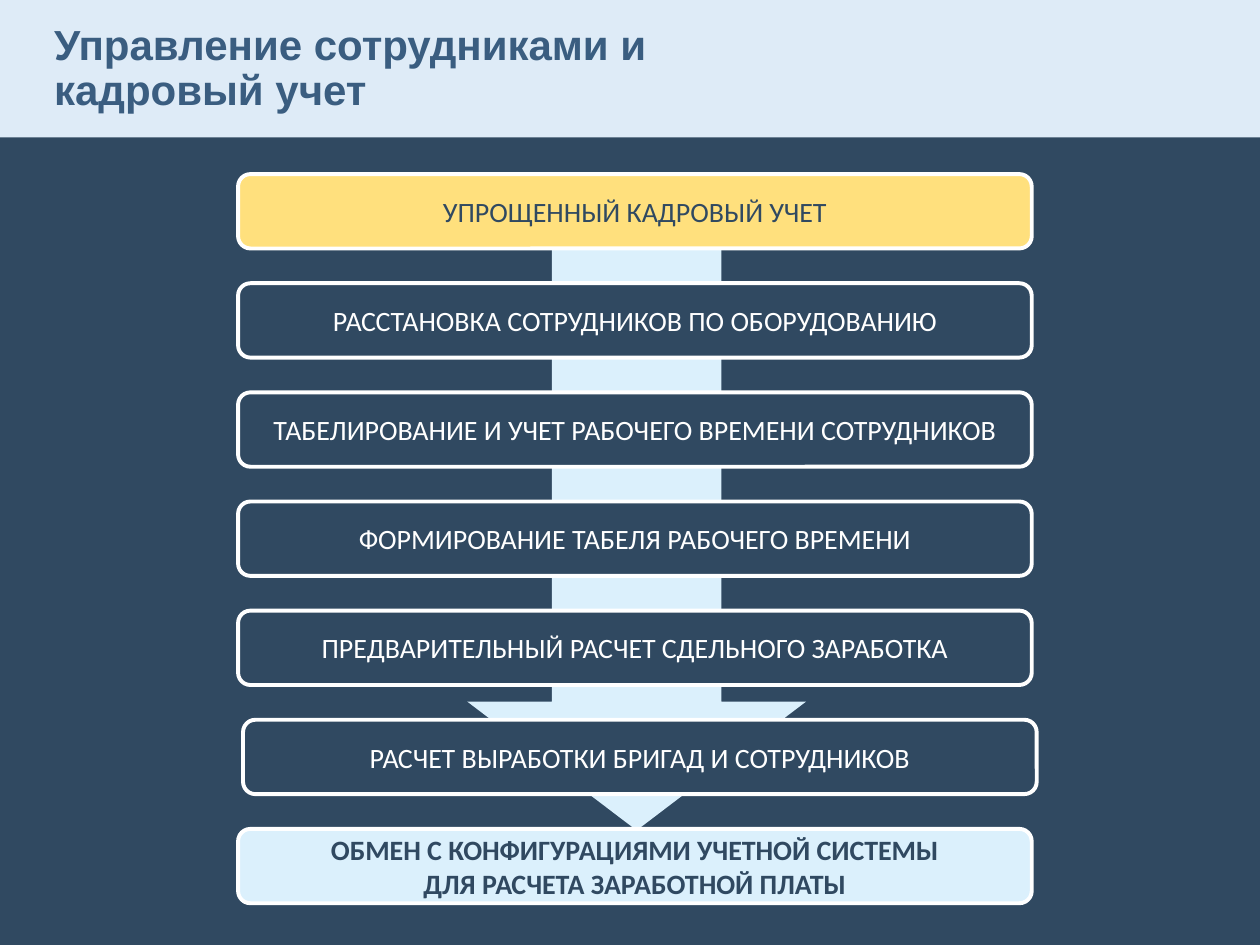
from pptx import Presentation
from pptx.dml.color import RGBColor
from pptx.enum.shapes import MSO_SHAPE
from pptx.enum.text import MSO_ANCHOR, PP_ALIGN
from pptx.util import Cm, Pt

TITLE = "Управление сотрудниками и кадровый учет"
STEPS = [
    ("УПРОЩЕННЫЙ КАДРОВЫЙ УЧЕТ", "start", 0),
    ("РАССТАНОВКА СОТРУДНИКОВ ПО ОБОРУДОВАНИЮ", "step", 0),
    ("ТАБЕЛИРОВАНИЕ И УЧЕТ РАБОЧЕГО ВРЕМЕНИ СОТРУДНИКОВ", "step", 0),
    ("ФОРМИРОВАНИЕ ТАБЕЛЯ РАБОЧЕГО ВРЕМЕНИ", "step", 0),
    ("ПРЕДВАРИТЕЛЬНЫЙ РАСЧЕТ СДЕЛЬНОГО ЗАРАБОТКА", "step", 0),
    ("РАСЧЕТ ВЫРАБОТКИ БРИГАД И СОТРУДНИКОВ", "step", 0.1),
    ("ОБМЕН С КОНФИГУРАЦИЯМИ УЧЕТНОЙ СИСТЕМЫ\vДЛЯ РАСЧЕТА ЗАРАБОТНОЙ ПЛАТЫ", "end", 0),
]
NAVY, PALE, WHITE = (RGBColor.from_string(c) for c in ("304961", "DBF0FC", "FFFFFF"))
THEME = {
    "back": NAVY,
    "band": RGBColor.from_string("DEEBF7"),
    "arrow": PALE,
    "edge": WHITE,
    "title": {"name": "Arial", "size": Pt(24), "bold": True, "color": RGBColor.from_string("3A5D80")},
    "text": {"name": "Calibri", "size": Pt(16)},
    "steps": {
        "start": (RGBColor.from_string("FFE07D"), {"color": NAVY, "bold": False}),
        "step": (NAVY, {"color": WHITE, "bold": False}),
        "end": (PALE, {"color": NAVY, "bold": True}),
    },
}
LEFT, TOP, WIDTH, HEIGHT, PITCH = 4.8, 3.51, 16, 1.5, 2.2


def style(font, form):
    for key, value in form.items():
        if key == "color":
            font.color.rgb = value
        else:
            setattr(font, key, value)


def write(shape, text, form, align):
    frame = shape.text_frame
    frame.word_wrap = True
    frame.vertical_anchor = MSO_ANCHOR.MIDDLE
    frame.text = text
    para = frame.paragraphs[0]
    para.alignment = align
    for run in para.runs:
        style(run.font, form)
    return para


def draw(slide, kind, box, fill, edge=None):
    shape = slide.shapes.add_shape(kind, *map(Cm, box))
    shape.shadow.inherit = False
    shape.fill.solid()
    shape.fill.fore_color.rgb = fill
    if edge is None:
        shape.line.fill.background()
    else:
        shape.line.color.rgb = edge
        shape.line.width = Pt(2.25)
    return shape


def main():
    """Build the slide of personnel accounting steps."""
    deck = Presentation()
    deck.slide_width, deck.slide_height = Cm(25.4), Cm(19.05)
    slide = deck.slides.add_slide(deck.slide_layouts[6])
    slide.background.fill.solid()
    slide.background.fill.fore_color.rgb = THEME["back"]

    draw(slide, MSO_SHAPE.RECTANGLE, (0, 0, 25.4, 2.77), THEME["band"])
    title = slide.shapes.add_textbox(Cm(0.84), Cm(0.41), Cm(15.39), Cm(1.98))
    write(title, TITLE, THEME["title"], PP_ALIGN.LEFT).line_spacing = 0.9

    arrow = draw(slide, MSO_SHAPE.DOWN_ARROW, (9.42, 5.03, 6.83, 11.71), THEME["arrow"])
    arrow.adjustments[0], arrow.adjustments[1] = 0.5, 0.38

    for row, (text, kind, shift) in enumerate(STEPS):
        fill, form = THEME["steps"][kind]
        box = (LEFT + shift, TOP + row * PITCH, WIDTH, HEIGHT)
        step = draw(slide, MSO_SHAPE.ROUNDED_RECTANGLE, box, fill, THEME["edge"])
        write(step, text, THEME["text"] | form, PP_ALIGN.CENTER)

    deck.save("out.pptx")


if __name__ == "__main__":
    main()
